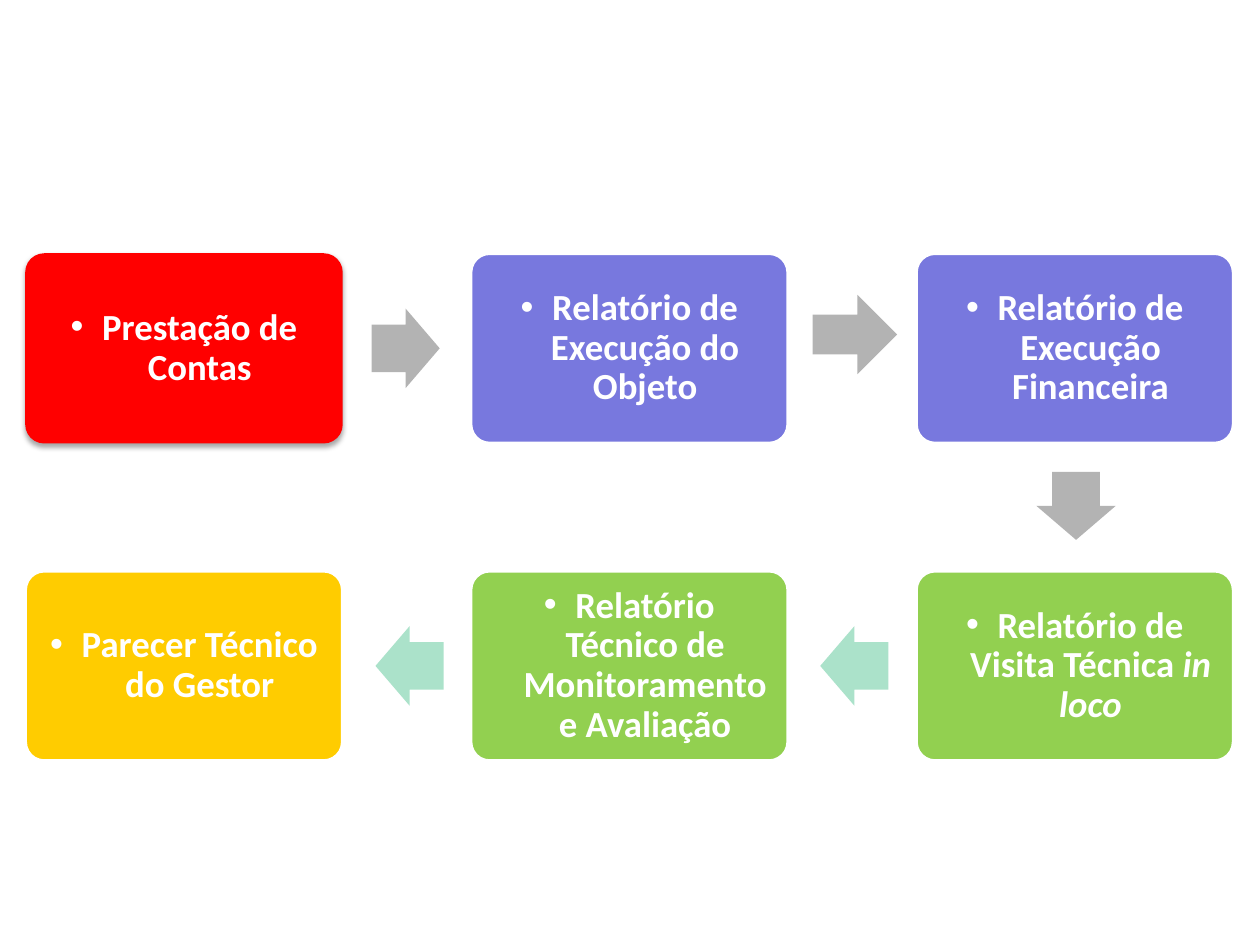
from lxml.etree import SubElement
from pptx import Presentation
from pptx.dml.color import RGBColor
from pptx.enum.shapes import MSO_SHAPE
from pptx.enum.text import MSO_ANCHOR, PP_ALIGN
from pptx.oxml import parse_xml
from pptx.oxml.ns import qn
from pptx.util import Inches, Pt


def color(fmt, value):
    fmt.rgb = RGBColor.from_string(value)


def add_filled(kind, x, y, w, h, fill):
    sp = s.shapes.add_shape(kind, Inches(x), Inches(y), Inches(w), Inches(h))
    sp.shadow.inherit = False
    sp.fill.solid()
    color(sp.fill.fore_color, fill)
    sp.line.fill.background()
    return sp


prs = Presentation()
prs.slide_width, prs.slide_height = Inches(10), Inches(7.5)
s = prs.slides.add_slide(prs.slide_layouts[6])

left, top, col_step, row_step = 0.2, 2.01, 3.535, 2.52
steps = [
    (0, 0, "FF0000", ["Prestação de Contas"]),
    (1, 0, "7878DE", ["Relatório de Execução do Objeto"]),
    (2, 0, "7878DE", ["Relatório de Execução Financeira"]),
    (2, 1, "92D050", ["Relatório de Visita Técnica ", "in loco"]),
    (1, 1, "92D050", ["Relatório Técnico de Monitoramento e Avaliação"]),
    (0, 1, "FFCC00", ["Parecer Técnico do Gestor"]),
]
boxes = []
for col, row, fill, texts in steps:
    sp = add_filled(MSO_SHAPE.ROUNDED_RECTANGLE, left + col * col_step,
                    top + row * row_step, 2.52, 1.51, fill)
    sp.adjustments[0] = 0.1
    boxes.append(sp)

    tf = sp.text_frame
    tf.word_wrap = True
    tf.vertical_anchor = MSO_ANCHOR.MIDDLE
    tf.margin_left = tf.margin_right = tf.margin_top = tf.margin_bottom = Inches(0.09)
    p = tf.paragraphs[0]
    p.alignment = PP_ALIGN.CENTER
    p.line_spacing = 0.9
    pPr = p._p.get_or_add_pPr()
    pPr.set("marL", str(Inches(0.25)))
    pPr.set("indent", str(Inches(-0.25)))
    SubElement(pPr, qn("a:buFont")).set("typeface", "Arial")
    SubElement(pPr, qn("a:buChar")).set("char", "•")
    for i, text in enumerate(texts):
        r = p.add_run()
        r.text = text
        r.font.name, r.font.size, r.font.bold = "Calibri", Pt(21), True
        if i:
            r.font.italic = True
        color(r.font.color, "FFFFFF")

for sp in boxes[1:]:
    color(sp.line.color, "FFFFFF")
    sp.line.width = Pt(2)

boxes[0]._element.spPr.find(qn("a:effectLst")).append(parse_xml(
    '<a:outerShdw xmlns:a="http://schemas.openxmlformats.org/drawingml/2006/main"'
    ' blurRad="40000" dist="23000" dir="5400000" rotWithShape="0">'
    '<a:srgbClr val="000000"><a:alpha val="35000"/></a:srgbClr></a:outerShdw>'))

arrows = [
    (2.95, 2.45, 0.54, 0, 0.6, "B3B3B3"),
    (6.45, 2.34, 0.67, 0, 0.5, "B3B3B3"),
    (8.27, 3.7, 0.54, 90, 0.6, "B3B3B3"),
    (6.51, 4.97, 0.54, 180, 0.6, "ABE2CA"),
    (2.98, 4.97, 0.54, 180, 0.6, "ABE2CA"),
]
for x, y, w, rotation, shaft, fill in arrows:
    sp = add_filled(MSO_SHAPE.RIGHT_ARROW, x, y, w, 0.63, fill)
    sp.adjustments[0], sp.adjustments[1] = shaft, 0.5
    sp.rotation = rotation

prs.save("out.pptx")
